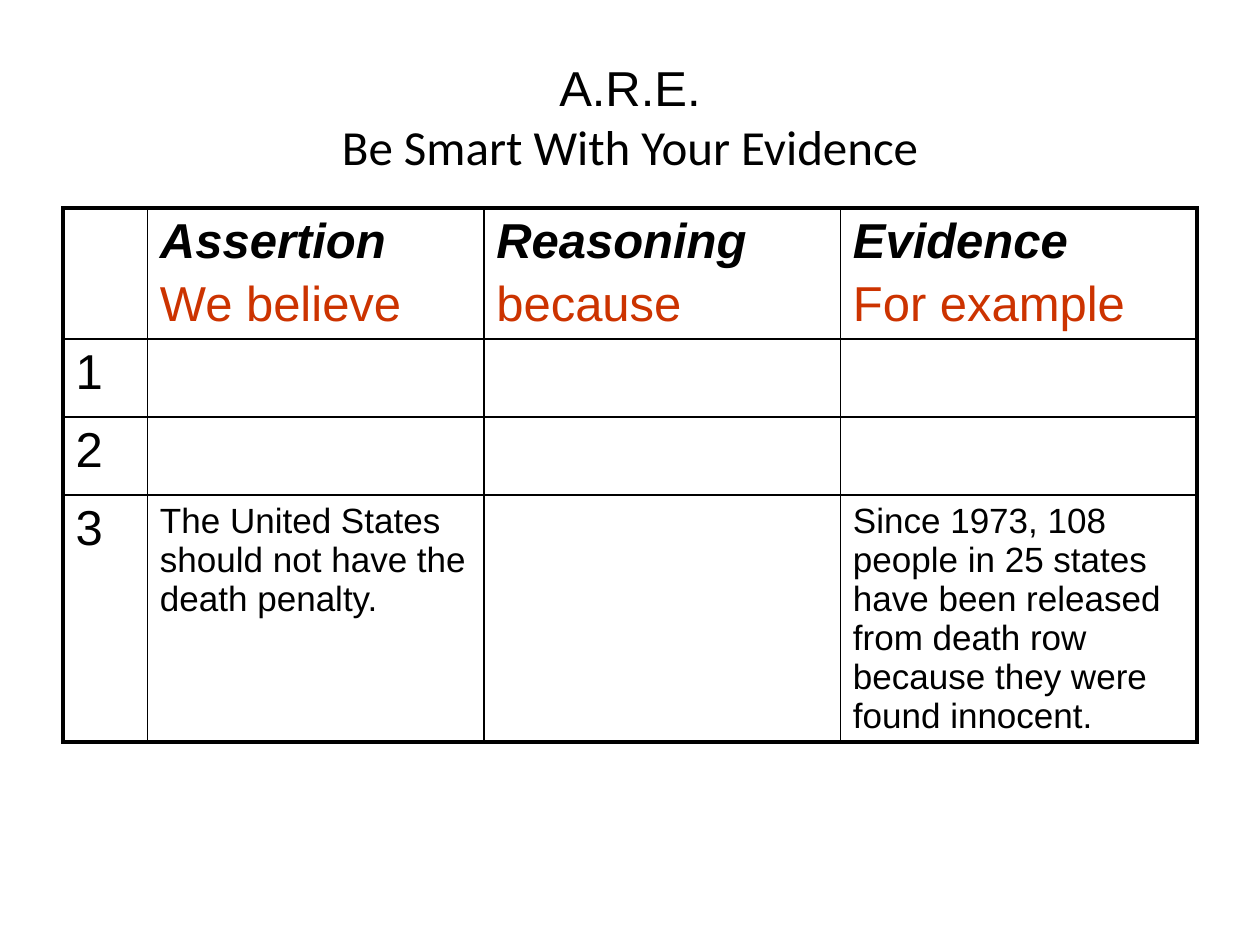
"""Build the A.R.E. evidence slide with its assertion, reasoning and evidence table."""
import pptx
import pptx.dml.color
import pptx.enum.text
import pptx.oxml
import pptx.oxml.ns
import pptx.util

Inches, Pt = pptx.util.Inches, pptx.util.Pt
RGBColor = pptx.dml.color.RGBColor
BLACK = RGBColor(0x00, 0x00, 0x00)
RED = RGBColor(0xCC, 0x33, 0x00)
THIN, THICK = 1, 2.25

TITLE = [("A.R.E.", "Arial"), ("Be Smart With Your Evidence", "Calibri")]
HEADERS = [
    ("Assertion", "We believe"),
    ("Reasoning", "because"),
    ("Evidence", "For example"),
]
ROWS = [
    ("1", "", "", ""),
    ("2", "", "", ""),
    (
        "3",
        "The United States should not have the death penalty.",
        "",
        "Since 1973, 108 people in 25 states have been released from death row "
        "because they were found innocent.",
    ),
]
COL_WIDTHS = [0.67, 2.67, 2.83, 2.83]
ROW_HEIGHTS = [1.04, 0.62, 0.62, 1.95]


def add_text(p, text, font="Arial", size=28, color=BLACK, bold=False, italic=False):
    r = p.add_run()
    r.text = text
    r.font.name, r.font.size = font, Pt(size)
    r.font.bold, r.font.italic = bold, italic
    r.font.color.rgb = color


def set_borders(cell, widths):
    tc_pr = cell._tc.get_or_add_tcPr()
    for i, (side, width) in enumerate(widths.items()):
        tc_pr.insert(i, pptx.oxml.parse_xml(
            f'<a:ln{side} {pptx.oxml.ns.nsdecls("a")} w="{int(Pt(width))}">'
            f'<a:solidFill><a:srgbClr val="{BLACK}"/></a:solidFill></a:ln{side}>'
        ))


def add_title(slide):
    sp = slide.shapes.title
    sp.left, sp.top, sp.width, sp.height = map(Inches, (0.5, 0.3, 9, 1.25))
    tf = sp.text_frame
    tf.vertical_anchor = pptx.enum.text.MSO_ANCHOR.MIDDLE
    p = tf.paragraphs[0]
    p.alignment = pptx.enum.text.PP_ALIGN.CENTER
    for i, (text, font) in enumerate(TITLE):
        if i:
            p.add_line_break()
        add_text(p, text, font=font)


def add_evidence_table(slide):
    n_rows, n_cols = len(ROW_HEIGHTS), len(COL_WIDTHS)
    table = slide.shapes.add_table(
        n_rows, n_cols, Inches(0.5), Inches(1.65),
        Inches(sum(COL_WIDTHS)), Inches(sum(ROW_HEIGHTS)),
    ).table
    table.first_row = table.horz_banding = False
    for col, width in zip(table.columns, COL_WIDTHS):
        col.width = Inches(width)
    for row, height in zip(table.rows, ROW_HEIGHTS):
        row.height = Inches(height)

    for i in range(n_rows):
        for j in range(n_cols):
            cell = table.cell(i, j)
            cell.fill.background()
            set_borders(cell, {
                "L": THICK if j == 0 else THIN,
                "R": THICK if j == n_cols - 1 else THIN,
                "T": THICK if i == 0 else THIN,
                "B": THICK if i == n_rows - 1 else THIN,
            })

    for j, (name, cue) in enumerate(HEADERS, 1):
        tf = table.cell(0, j).text_frame
        add_text(tf.paragraphs[0], name, bold=True, italic=True)
        p = tf.add_paragraph()
        p.space_before = Pt(4.5)
        add_text(p, cue, color=RED)
    for i, texts in enumerate(ROWS, 1):
        for j, text in enumerate(texts):
            if text:
                p = table.cell(i, j).text_frame.paragraphs[0]
                add_text(p, text, size=20 if j else 28)


def main():
    prs = pptx.Presentation()
    prs.slide_width, prs.slide_height = Inches(10), Inches(7.5)
    slide = prs.slides.add_slide(prs.slide_layouts[5])
    add_title(slide)
    add_evidence_table(slide)
    prs.save("out.pptx")


if __name__ == "__main__":
    main()
